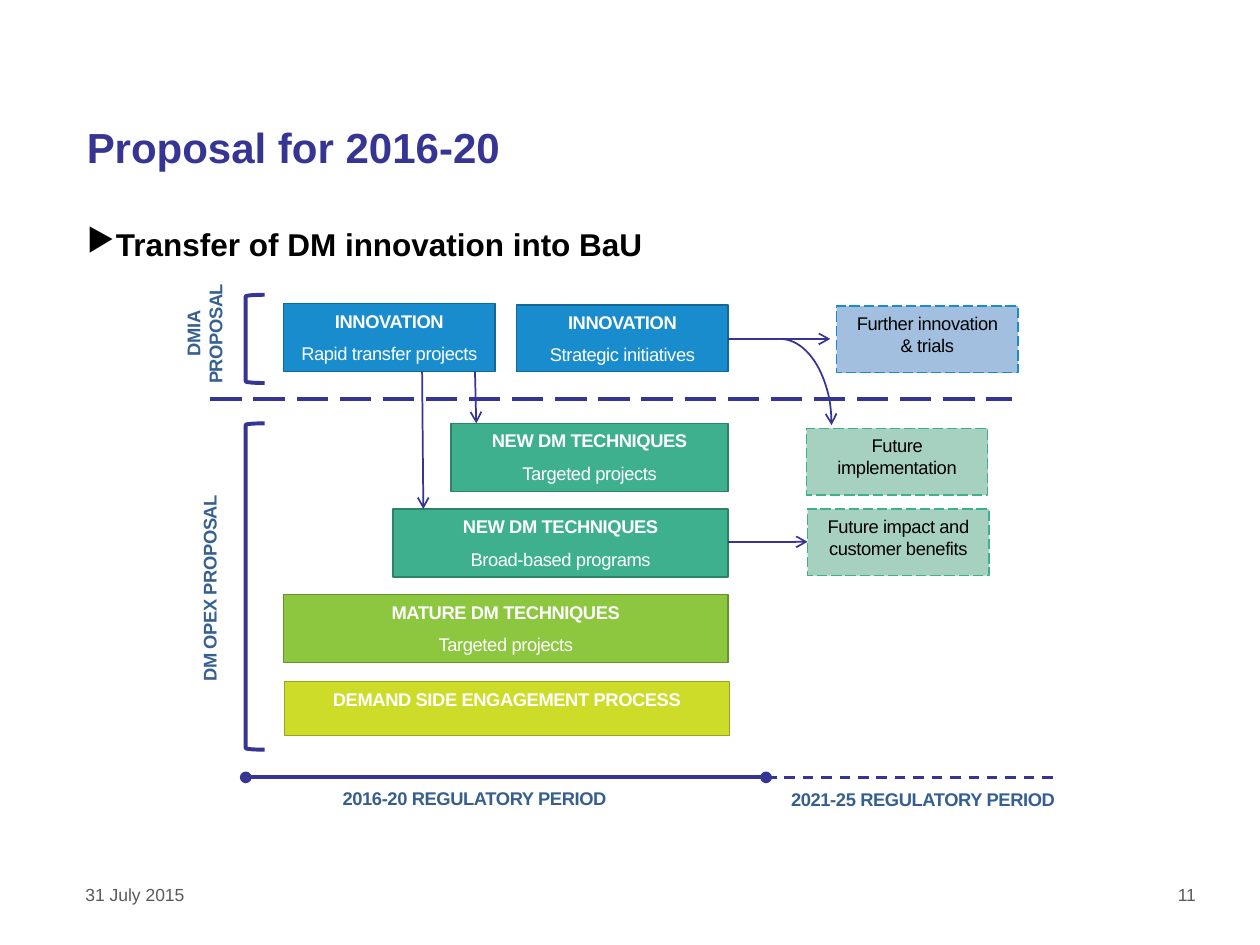
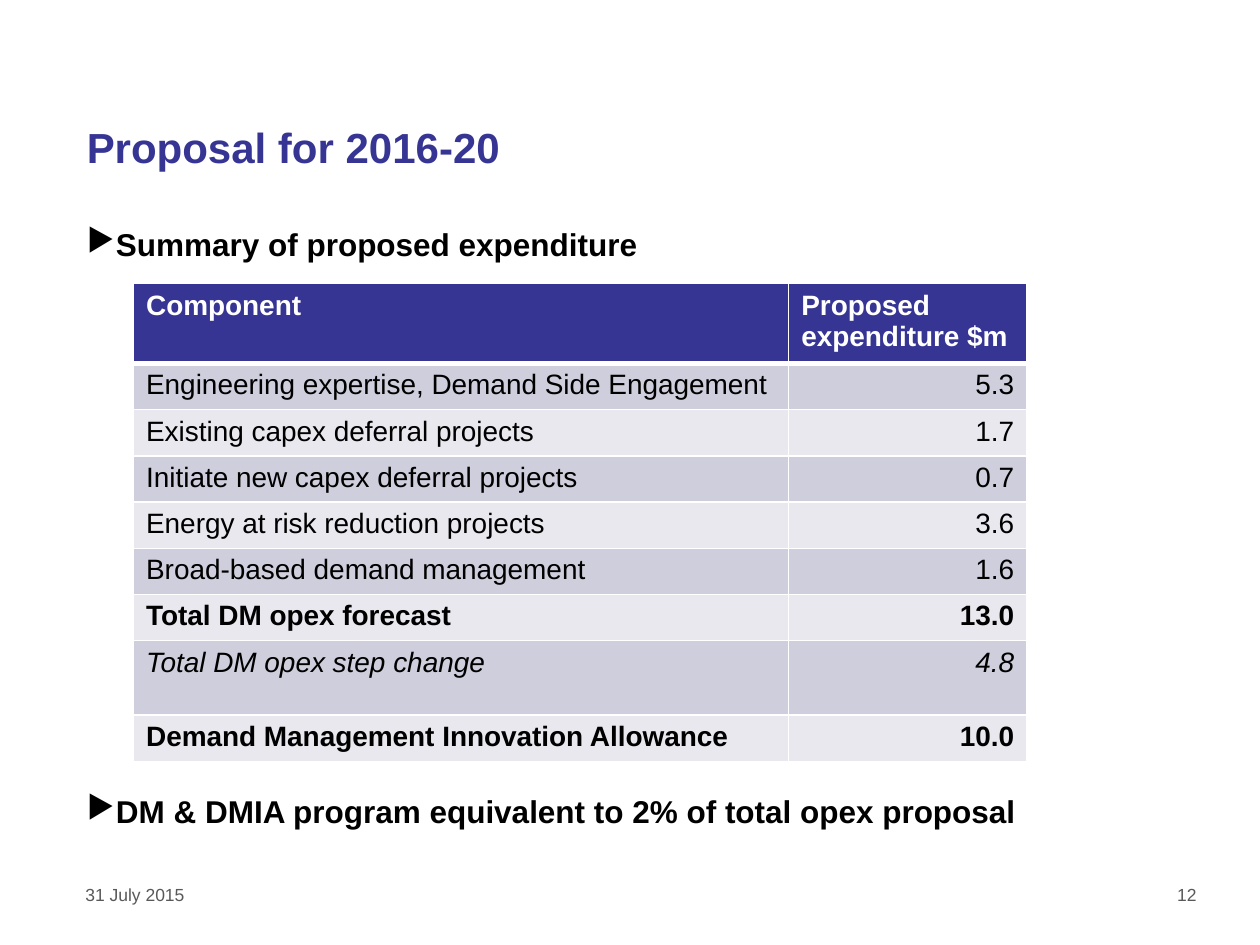
from dataclasses import dataclass

from lxml.etree import SubElement
from pptx import Presentation
from pptx.dml.color import RGBColor
from pptx.enum.dml import MSO_LINE
from pptx.enum.shapes import MSO_CONNECTOR, MSO_SHAPE
from pptx.enum.text import MSO_ANCHOR, PP_ALIGN
from pptx.oxml.ns import qn
from pptx.util import Inches, Pt


@dataclass(frozen=True)
class Theme:
    font: str = "Arial"
    navy: str = "363594"
    black: str = "000000"
    white: str = "FFFFFF"
    footer_grey: str = "595959"
    side_label: str = "376092"
    period_label: str = "365F91"
    blue: tuple = ("188CCC", "126897")
    teal: tuple = ("3EB08E", "2E8269")
    green: tuple = ("8DC63F", "68922F")
    lime: tuple = ("CDDC29", "98A31E")
    future_blue: tuple = ("A2BFE0", "188CCC")
    future_teal: tuple = ("A6D0C0", "3EB08E")
    bands: tuple = ("CECEDC", "E8E8EE")
    title_size: float = 24
    heading_size: float = 18
    table_size: float = 16
    diagram_size: float = 10.5
    footer_size: float = 10


THEME = Theme()
TITLE = "Proposal for 2016-20"
DATE = "31 July 2015"
DIAGRAM_TEXT = {"size": THEME.diagram_size, "tracking": -20}


def rgb(color):
    return RGBColor.from_string(color)


def write_text(frame, text, *, size, color=THEME.black, bold=False, italic=False,
               align=PP_ALIGN.LEFT, before=0, after=0, line_spacing=None,
               tracking=None, bullet=None):
    """Add a paragraph to the frame, using the first one while it is empty."""
    first = not frame.text
    paragraph = frame.paragraphs[0] if first else frame.add_paragraph()
    if bullet:
        properties = paragraph._p.get_or_add_pPr()
        properties.set("marL", str(Inches(0.2)))
        properties.set("indent", str(-Inches(0.2)))
        SubElement(properties, qn("a:buChar")).set("char", bullet)
    paragraph.alignment = align
    paragraph.space_before = Pt(0 if first else before)
    paragraph.space_after = Pt(after)
    if line_spacing:
        paragraph.line_spacing = line_spacing
    run = paragraph.add_run()
    run.text = text
    run.font.name = THEME.font
    run.font.size = Pt(size)
    run.font.bold = bold
    run.font.italic = italic
    run.font.color.rgb = rgb(color)
    if tracking:
        run.font._element.set("spc", str(tracking))


def add_text(slide, left, top, width, height, text, anchor=MSO_ANCHOR.TOP, **text_format):
    box = slide.shapes.add_textbox(Inches(left), Inches(top), Inches(width), Inches(height))
    box.text_frame.word_wrap = True
    box.text_frame.vertical_anchor = anchor
    write_text(box.text_frame, text, **text_format)


def add_heading(slide, top, text, height=0.48):
    add_text(slide, 0.59, top, 8.82, height, text, size=THEME.heading_size, bold=True,
             line_spacing=0.9, after=6, bullet="▶")


def add_page(presentation, number):
    """Add a blank slide with the shared title, date and page number."""
    slide = presentation.slides.add_slide(presentation.slide_layouts[6])
    add_text(slide, 0.59, 0.45, 6.79, 0.97, TITLE, anchor=MSO_ANCHOR.BOTTOM,
             size=THEME.title_size, color=THEME.navy, bold=True, line_spacing=0.9)
    footer = {"anchor": MSO_ANCHOR.MIDDLE, "size": THEME.footer_size,
              "color": THEME.footer_grey}
    add_text(slide, 0.58, 6.96, 1.98, 0.28, DATE, **footer)
    add_text(slide, 9.15, 6.96, 0.54, 0.28, str(number), align=PP_ALIGN.CENTER, **footer)
    return slide


def style_line(line, color, width, dash=None):
    line.color.rgb = rgb(color)
    line.width = Pt(width)
    if dash:
        line.dash_style = dash


def add_line_ends(shape, head=None, tail=None):
    outline = shape.element.spPr.find(qn("a:ln"))
    for tag, kind in (("a:headEnd", head), ("a:tailEnd", tail)):
        if kind:
            SubElement(outline, qn(tag)).set("type", kind)


def add_line(slide, start, end, width=1, dash=None, head=None, tail=None):
    connector = slide.shapes.add_connector(
        MSO_CONNECTOR.STRAIGHT, *[Inches(value) for value in (*start, *end)])
    style_line(connector.line, THEME.navy, width, dash)
    add_line_ends(connector, head, tail)
    SubElement(connector.element.spPr, qn("a:effectLst"))


def add_shape(slide, kind, left, top, width, height, fill=None):
    shape = slide.shapes.add_shape(
        kind, Inches(left), Inches(top), Inches(width), Inches(height))
    shape.shadow.inherit = False
    if fill:
        shape.fill.solid()
        shape.fill.fore_color.rgb = rgb(fill)
    else:
        shape.fill.background()
    shape.text_frame.word_wrap = True
    shape.text_frame.vertical_anchor = MSO_ANCHOR.TOP
    return shape


def add_activity(slide, left, top, width, height, colors, heading, detail=None):
    fill, edge = colors
    box = add_shape(slide, MSO_SHAPE.RECTANGLE, left, top, width, height, fill)
    style_line(box.line, edge, 0.85)
    for text, bold in ((heading, True), (detail, False)):
        if text:
            write_text(box.text_frame, text, color=THEME.white, bold=bold, before=3,
                       after=3, align=PP_ALIGN.CENTER, **DIAGRAM_TEXT)


def add_outcome(slide, left, top, colors, text):
    fill, edge = colors
    box = add_shape(slide, MSO_SHAPE.RECTANGLE, left, top, 1.44, 0.53, fill)
    style_line(box.line, edge, 0.75, MSO_LINE.LONG_DASH)
    write_text(box.text_frame, text, after=3, align=PP_ALIGN.CENTER, **DIAGRAM_TEXT)


def add_label(slide, left, top, width, height, text, color, align, rotation=0):
    label = add_shape(slide, MSO_SHAPE.RECTANGLE, left, top, width, height, THEME.white)
    label.line.fill.background()
    label.rotation = rotation
    if rotation:
        label.text_frame.margin_left = label.text_frame.margin_right = Inches(0.05)
    write_text(label.text_frame, text, color=color, bold=True, after=6, align=align,
               **DIAGRAM_TEXT)


def add_bracket(slide, top, height):
    bracket = add_shape(slide, MSO_SHAPE.LEFT_BRACKET, 1.95, top, 0.15, height)
    style_line(bracket.line, THEME.navy, 2.25)


def add_curved_arrow(slide, left, top, width, height):
    arc = add_shape(slide, MSO_SHAPE.ARC, left, top, width, height)
    style_line(arc.line, THEME.navy, 1)
    add_line_ends(arc, tail="arrow")


def set_cell_borders(cell, bottom_width):
    properties = cell._tc.get_or_add_tcPr()
    widths = (("a:lnL", 1), ("a:lnR", 1), ("a:lnT", 1), ("a:lnB", bottom_width))
    for position, (tag, width) in enumerate(widths):
        border = SubElement(properties, qn(tag), w=str(Pt(width)))
        fill = SubElement(border, qn("a:solidFill"))
        SubElement(fill, qn("a:srgbClr"), val=THEME.white)
        properties.insert(position, border)


def add_expenditure_table(slide, left, top, column_widths, header, rows):
    """Rows hold component, amount, row height and text style."""
    lines = [(*header, 0.58, {"bold": True, "color": THEME.white}), *rows]
    heights = [line[2] for line in lines]
    table = slide.shapes.add_table(
        len(lines), 2, Inches(left), Inches(top),
        Inches(sum(column_widths)), Inches(sum(heights))).table
    table.horz_banding = False
    for column, width in zip(table.columns, column_widths):
        column.width = Inches(width)
    for index, (component, amount, height, style) in enumerate(lines):
        table.rows[index].height = Inches(height)
        fill = THEME.bands[(index - 1) % 2] if index else THEME.navy
        amount_align = PP_ALIGN.RIGHT if index else PP_ALIGN.LEFT
        for column, (text, align) in enumerate(
                ((component, PP_ALIGN.LEFT), (amount, amount_align))):
            cell = table.cell(index, column)
            cell.fill.solid()
            cell.fill.fore_color.rgb = rgb(fill)
            set_cell_borders(cell, 1 if index else 3)
            write_text(cell.text_frame, text, size=THEME.table_size, align=align, **style)


def build_transfer_slide(presentation):
    slide = add_page(presentation, 11)
    add_heading(slide, 1.77, "Transfer of DM innovation into BaU", height=4.92)

    for activity in (
        (2.25, 2.41, 1.68, 0.54, THEME.blue, "INNOVATION", "Rapid transfer projects"),
        (4.1, 2.42, 1.68, 0.53, THEME.blue, "INNOVATION", "Strategic initiatives"),
        (3.58, 3.36, 2.2, 0.54, THEME.teal, "NEW DM TECHNIQUES", "Targeted projects"),
        (3.12, 4.04, 2.66, 0.54, THEME.teal, "NEW DM TECHNIQUES", "Broad-based programs"),
        (2.25, 4.72, 3.53, 0.54, THEME.green, "MATURE DM TECHNIQUES", "Targeted projects"),
        (2.26, 5.41, 3.53, 0.43, THEME.lime, "DEMAND SIDE ENGAGEMENT PROCESS"),
    ):
        add_activity(slide, *activity)

    add_line(slide, (1.67, 3.17), (8.03, 3.17), 2.25, MSO_LINE.LONG_DASH)
    for start, end in (
        ((5.78, 2.69), (6.59, 2.69)),
        ((5.78, 4.3), (6.41, 4.3)),
        ((3.77, 2.95), (3.78, 3.36)),
        ((3.35, 2.95), (3.36, 4.04)),
    ):
        add_line(slide, start, end, tail="arrow")
    add_curved_arrow(slide, 5.78, 2.69, 0.82, 1.37)

    add_outcome(slide, 6.64, 2.43, THEME.future_blue, "Further innovation & trials")
    add_outcome(slide, 6.4, 3.4, THEME.future_teal, "Future implementation")
    add_outcome(slide, 6.41, 4.04, THEME.future_teal, "Future impact and customer benefits")

    add_line(slide, (1.95, 6.17), (6.08, 6.17), 2.25, head="oval", tail="oval")
    add_line(slide, (6.08, 6.17), (8.41, 6.17), 1.5, MSO_LINE.DASH)
    period = {"color": THEME.period_label, "align": PP_ALIGN.JUSTIFY}
    add_label(slide, 2.62, 6.2, 2.79, 0.38, "2016-20 REGULATORY PERIOD", **period)
    add_label(slide, 6.18, 6.21, 2.44, 0.37, "2021-25 REGULATORY PERIOD", **period)

    side = {"color": THEME.side_label, "align": PP_ALIGN.CENTER, "rotation": 270}
    add_label(slide, 0.6, 4.48, 2.23, 0.38, "DM OPEX PROPOSAL", **side)
    add_label(slide, 1.16, 2.39, 0.99, 0.52, "DMIA PROPOSAL", **side)
    add_bracket(slide, 3.36, 2.59)
    add_bracket(slide, 2.34, 0.7)


def build_expenditure_slide(presentation):
    slide = add_page(presentation, 12)
    add_heading(slide, 1.77, "Summary of proposed expenditure")
    add_expenditure_table(
        slide, 1.06, 2.25, (5.2, 1.89), ("Component", "Proposed expenditure $m"), (
            ("Engineering expertise, Demand Side Engagement", "5.3", 0.35, {}),
            ("Existing capex deferral projects", "1.7", 0.35, {}),
            ("Initiate new capex deferral projects", "0.7", 0.35, {}),
            ("Energy at risk reduction projects", "3.6", 0.35, {}),
            ("Broad-based demand management", "1.6", 0.35, {}),
            ("Total DM opex forecast", "13.0", 0.35, {"bold": True}),
            ("Total DM opex step change", "4.8", 0.59, {"italic": True}),
            ("Demand Management Innovation Allowance", "10.0", 0.35, {"bold": True}),
        ))
    add_heading(slide, 6.27, "DM & DMIA program equivalent to 2% of total opex proposal")


def main():
    presentation = Presentation()
    presentation.slide_width = Inches(10)
    presentation.slide_height = Inches(7.5)
    build_transfer_slide(presentation)
    build_expenditure_slide(presentation)
    presentation.save("out.pptx")


if __name__ == "__main__":
    main()
